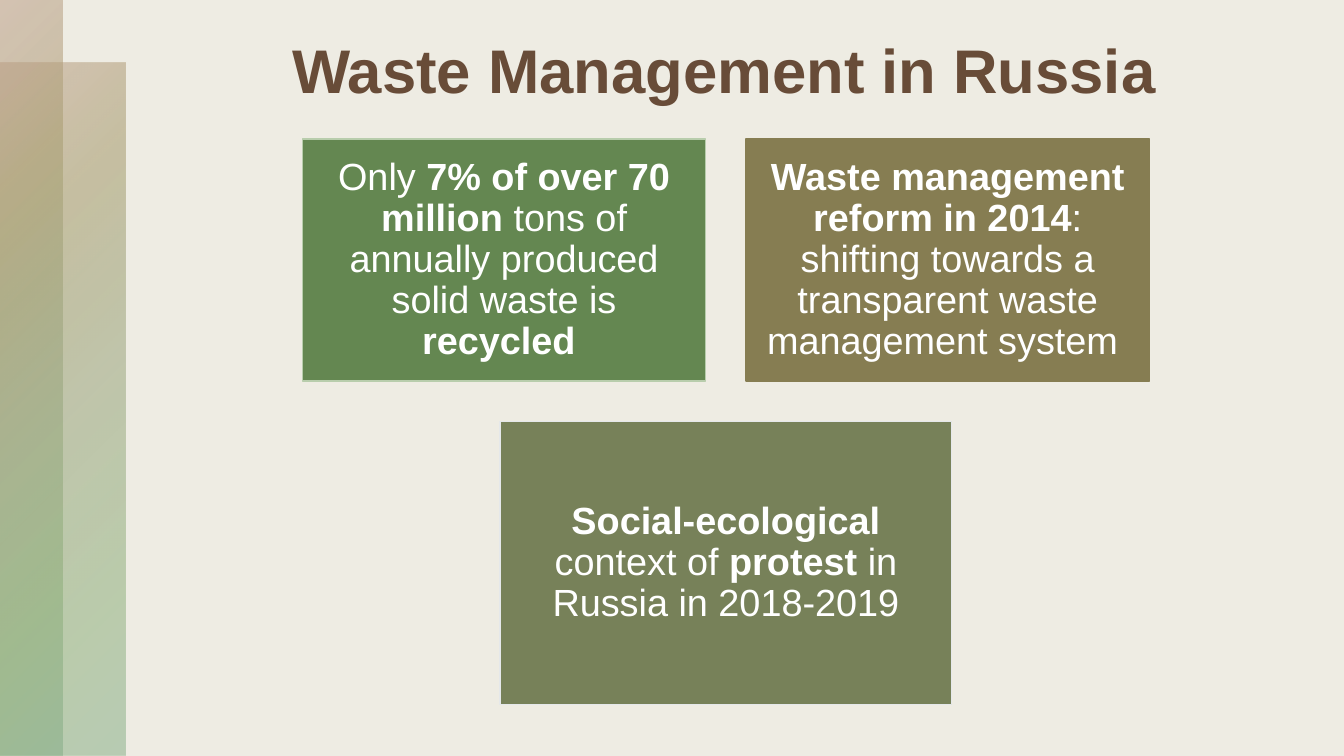
from pptx import Presentation
from pptx.dml.color import RGBColor as RGB
from pptx.enum.shapes import MSO_SHAPE as SHAPE
from pptx.enum.text import MSO_ANCHOR as ANCHOR, PP_ALIGN as ALIGN
from pptx.oxml import parse_xml
from pptx.oxml.ns import nsdecls
from pptx.util import Inches, Pt

COLORS = {
    "background": "EEECE3", "title": "684C38", "text": "FFFFFF",
    "green": "648751", "green_line": "B8CDAC", "brown": "867D52",
    "olive": "778159", "olive_line": "E5E8EA",
}
BAND_STOPS = [(0, "BC9B84", 50), (25, "ABA175", 60), (50, "9BA57D", 55),
              (81, "88AC75", 50), (99, "81AC84", 50)]


class SlideBuilder:
    """Draws styled elements on the current slide."""

    font = "Arial"
    inset = Inches(0.11)

    def __init__(self, prs):
        self.slide = prs.slides.add_slide(prs.slide_layouts[6])

    def color(self, name):
        return RGB.from_string(COLORS[name])

    def background(self, name):
        fill = self.slide.background.fill
        fill.solid()
        fill.fore_color.rgb = self.color(name)

    def rect(self, x, y, w, h):
        sp = self.slide.shapes.add_shape(
            SHAPE.RECTANGLE, Inches(x), Inches(y), Inches(w), Inches(h))
        sp.shadow.inherit = False
        return sp

    def band(self, x, y, w, h):
        sp = self.rect(x, y, w, h)
        sp.line.fill.background()
        sp.fill.solid()
        stops = "".join(
            f'<a:gs pos="{pos * 1000}"><a:srgbClr val="{color}">'
            f'<a:alpha val="{alpha * 1000}"/></a:srgbClr></a:gs>'
            for pos, color, alpha in BAND_STOPS)
        gradient = parse_xml(
            f'<a:gradFill {nsdecls("a")} rotWithShape="1"><a:gsLst>{stops}</a:gsLst>'
            '<a:path path="circle"><a:fillToRect r="100000" b="100000"/></a:path>'
            '</a:gradFill>')
        sppr = sp.element.spPr
        sppr.replace(sppr.find("{*}solidFill"), gradient)

    def add_text(self, tf, runs, size, color):
        tf.word_wrap = True
        p = tf.paragraphs[0]
        p.alignment = ALIGN.CENTER
        for text, bold in runs:
            r = p.add_run()
            r.text = text
            r.font.name = self.font
            r.font.size = Pt(size)
            r.font.bold = bold
            r.font.color.rgb = self.color(color)
        return p

    def title(self, text, x, y, w, h):
        box = self.slide.shapes.add_textbox(
            Inches(x), Inches(y), Inches(w), Inches(h))
        tf = box.text_frame
        tf.margin_top = Inches(0.12)
        self.add_text(tf, [(text, True)], 44, "title")

    def card(self, x, y, w, h, fill, line, runs):
        sp = self.rect(x, y, w, h)
        sp.fill.solid()
        sp.fill.fore_color.rgb = self.color(fill)
        sp.line.color.rgb = self.color(line)
        sp.line.width = Pt(1)
        tf = sp.text_frame
        tf.vertical_anchor = ANCHOR.MIDDLE
        tf.margin_left = tf.margin_right = self.inset
        tf.margin_top = tf.margin_bottom = self.inset
        self.add_text(tf, runs, 27, "text").line_spacing = 0.9


def main():
    prs = Presentation()
    prs.slide_width, prs.slide_height = Inches(13.33), Inches(7.5)
    s = SlideBuilder(prs)
    s.background("background")
    s.band(0, 0.62, 1.24, 6.88)
    s.band(0, 0, 0.62, 7.5)
    s.title("Waste Management in Russia", 2, 0.2, 10.37, 1.7)
    s.card(3, 1.38, 4, 2.4, "green", "green_line", [
        ("Only ", False), ("7% of over 70 million ", True),
        ("tons of annually produced solid waste is ", False),
        ("recycled ", True)])
    s.card(7.4, 1.38, 4, 2.4, "brown", "brown", [
        ("Waste management reform in 2014", True),
        (": shifting towards a transparent waste management system ", False)])
    s.card(4.96, 4.18, 4.48, 2.81, "olive", "olive_line", [
        ("Social-ecological ", True), ("context of ", False),
        ("protest", True), (" in Russia in 2018-2019", False)])
    prs.save("out.pptx")


if __name__ == "__main__":
    main()
